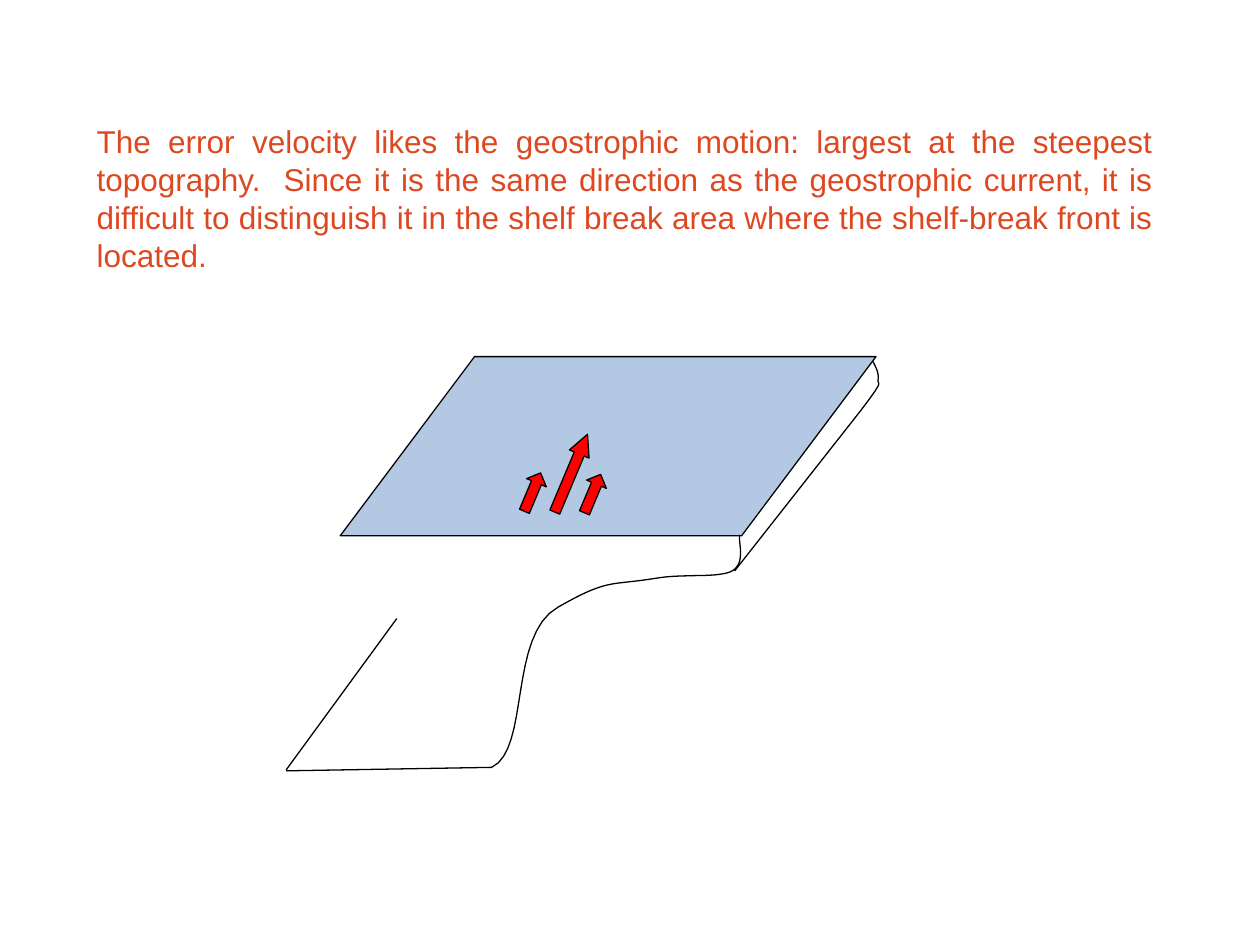
from lxml import etree
from pptx import Presentation
from pptx import util as u
from pptx.dml.color import RGBColor
from pptx.enum import shapes, text
from pptx.oxml.ns import qn

NOTE = (
    "The error velocity likes the geostrophic motion: largest at the steepest "
    "topography.  Since it is the same direction as the geostrophic current, "
    "it is difficult to distinguish it in the shelf break area where the "
    "shelf-break front is located."
)
HUES = {"note": "DD4821", "sea": "4F81BD", "flow": "FF0000", "line": "000000"}
SEA = (6.86, 7.19, 10.8, 3.61)
FLOWS = [
    (11.3, 8.69, 1.7, 1),
    (10.52, 9.5, 0.84, 0.5),
    (11.73, 9.53, 0.84, 0.5),
]
WIDTH, TURN = 0.43, 22.8
EDGES = [
    [
        [(14.91, 10.8)],
        [(14.88, 10.92), (15.04, 11.35), (14.76, 11.51)],
        [(14.48, 11.66), (13.79, 11.56), (13.21, 11.66)],
        [(12.29, 11.81), (12.27, 11.66), (11.25, 12.24)],
        [(10.24, 12.8), (10.69, 15.11), (9.91, 15.47)],
        [(5.77, 15.54)],
    ],
    [
        [(17.6, 7.29)],
        [(17.63, 7.37), (17.73, 7.49), (17.7, 7.67)],
        [(17.7, 7.77), (17.83, 7.65), (17.35, 8.28)],
        [(14.81, 11.51)],
    ],
    [[(8, 12.47)], [(5.77, 15.52)]],
]
STEPS = 16


def color(name):
    return RGBColor.from_string(HUES[name])


def style(shape, fill=None, alpha=None):
    shape.shadow.inherit = False
    shape.line.color.rgb = color("line")
    shape.line.width = u.Pt(0.75)
    if fill is None:
        shape.fill.background()
        return
    shape.fill.solid()
    shape.fill.fore_color.rgb = color(fill)
    if alpha:
        hue = shape.fill._xPr.find(".//" + qn("a:srgbClr"))
        etree.SubElement(hue, qn("a:alpha"), val=str(alpha * 1000))


def preset(slide, kind, box, adjust, turn=0, **look):
    shape = slide.shapes.add_shape(kind, *map(u.Cm, box))
    for spot, value in enumerate(adjust):
        shape.adjustments[spot] = value
    shape.rotation = turn
    style(shape, **look)


def bend(start, ctrl):
    pts = [start, *ctrl]
    for step in range(1, STEPS + 1):
        t = step / STEPS
        parts = ((1 - t) ** 3, 3 * t * (1 - t) ** 2, 3 * t * t * (1 - t), t ** 3)
        yield tuple(sum(w * p[axis] for w, p in zip(parts, pts)) for axis in (0, 1))


def outline(slide, edge):
    pts = list(edge[0])
    for part in edge[1:]:
        pts += part if len(part) == 1 else bend(pts[-1], part)
    first, *rest = [(u.Cm(x), u.Cm(y)) for x, y in pts]
    form = slide.shapes.build_freeform(*first)
    form.add_line_segments(rest, close=False)
    style(form.convert_to_shape())


def write(slide, words, box, size, hue, font="Arial", align=text.PP_ALIGN.JUSTIFY):
    frame = slide.shapes.add_textbox(*map(u.Cm, box)).text_frame
    frame.word_wrap = True
    frame.auto_size = text.MSO_AUTO_SIZE.SHAPE_TO_FIT_TEXT
    para = frame.paragraphs[0]
    para.alignment = align
    run = para.add_run()
    run.text = words
    run.font.name = font
    run.font.size = u.Pt(size)
    run.font.color.rgb = color(hue)


def main():
    deck = Presentation()
    deck.slide_width, deck.slide_height = u.Cm(25.4), u.Cm(19.05)
    slide = deck.slides.add_slide(deck.slide_layouts[6])
    kinds = shapes.MSO_SHAPE
    preset(slide, kinds.PARALLELOGRAM, SEA, [0.75], fill="sea", alpha=43)
    for edge in EDGES:
        outline(slide, edge)
    for left, top, tall, head in FLOWS:
        box = (left, top, WIDTH, tall)
        preset(slide, kinds.UP_ARROW, box, [0.5, head], TURN, fill="flow")
    write(slide, NOTE, (1.7, 2.34, 21.79, 3.3), size=18, hue="note")
    deck.save("out.pptx")


if __name__ == "__main__":
    main()
